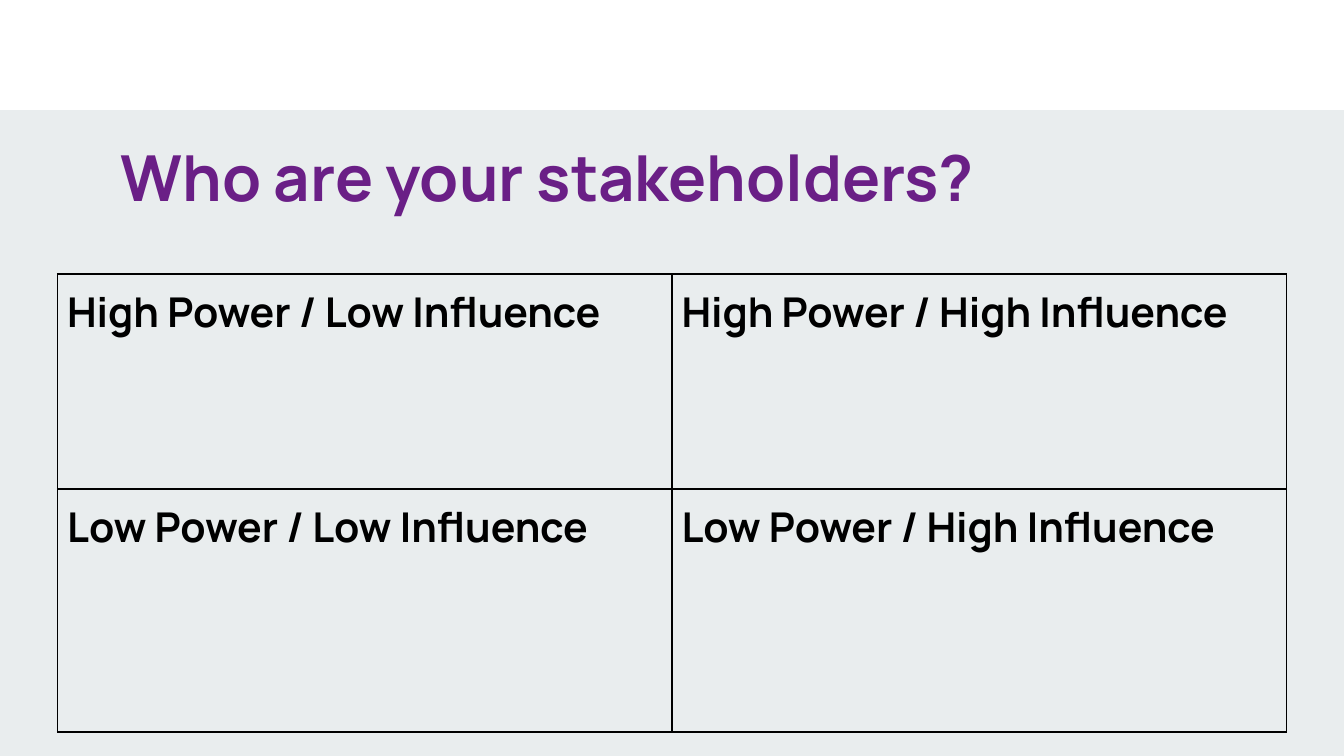
from lxml.etree import SubElement
from pptx import Presentation
from pptx.dml.color import RGBColor
from pptx.enum.shapes import MSO_SHAPE
from pptx.oxml.ns import qn
from pptx.util import Cm, Pt

COLORS = {"page": "E9EDEE", "band": "FFFFFF", "title": "6A1F86", "ink": "000000"}
FONT = "Manrope"
QUADRANTS = [
    ["High Power / Low Influence", "High Power / High Influence"],
    ["Low Power / Low Influence", "Low Power / High Influence"],
]


def rgb(name):
    return RGBColor.from_string(COLORS[name])


def style(p, size, color):
    p.font.name = FONT
    p.font.size = Pt(size)
    p.font.bold = True
    p.font.color.rgb = rgb(color)


def add_band(s, left, top, width, height):
    sp = s.shapes.add_shape(MSO_SHAPE.RECTANGLE, Cm(left), Cm(top), Cm(width), Cm(height))
    sp.shadow.inherit = False
    sp.fill.solid()
    sp.fill.fore_color.rgb = rgb("band")
    sp.line.fill.background()


def add_title(s, left, top, width, height, text):
    tf = s.shapes.add_textbox(Cm(left), Cm(top), Cm(width), Cm(height)).text_frame
    tf.word_wrap = True
    tf.margin_left = tf.margin_right = tf.margin_top = tf.margin_bottom = Cm(0.25)
    p = tf.paragraphs[0]
    p.text = text
    p.line_spacing = 0.93
    style(p, 34, "title")


def add_borders(cell):
    tcPr = cell._tc.get_or_add_tcPr()
    for i, side in enumerate(("a:lnL", "a:lnR", "a:lnT", "a:lnB")):
        ln = SubElement(tcPr, qn(side), w=str(Pt(1)))
        fill = SubElement(ln, qn("a:solidFill"))
        SubElement(fill, qn("a:srgbClr"), val=COLORS["ink"])
        tcPr.remove(ln)
        tcPr.insert(i, ln)


def add_matrix(s, left, top, width, row_heights, labels):
    n_cols = len(labels[0])
    table = s.shapes.add_table(
        len(labels), n_cols, Cm(left), Cm(top), Cm(width), Cm(sum(row_heights))
    ).table
    table.first_row = table.horz_banding = False
    for col in table.columns:
        col.width = Cm(width / n_cols)
    for row, height, texts in zip(table.rows, row_heights, labels):
        row.height = Cm(height)
        for cell, text in zip(row.cells, texts):
            cell.fill.background()
            cell.margin_left = cell.margin_right = Cm(0.18)
            cell.margin_top = cell.margin_bottom = Cm(0.18)
            cell.text = text
            style(cell.text_frame.paragraphs[0], 22, "ink")
            add_borders(cell)


def main():
    prs = Presentation()
    prs.slide_width, prs.slide_height = Cm(25.4), Cm(14.29)
    s = prs.slides.add_slide(prs.slide_layouts[6])
    s.background.fill.solid()
    s.background.fill.fore_color.rgb = rgb("page")
    add_band(s, 0, 0, 25.4, 2.08)
    add_title(s, 2.03, 2.49, 21.36, 3.2, "Who are your stakeholders?")
    add_matrix(s, 1.09, 5.18, 23.22, [4.06, 4.6], QUADRANTS)
    prs.save("out.pptx")


if __name__ == "__main__":
    main()
